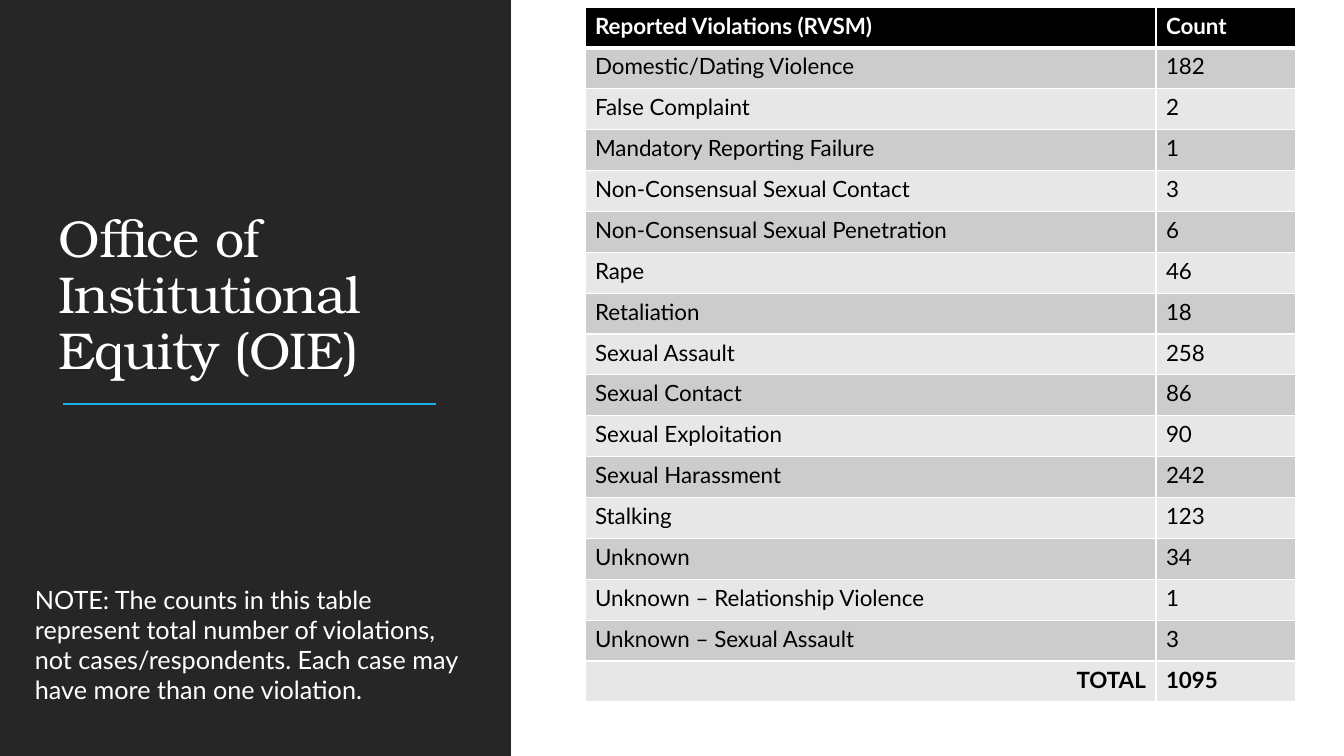
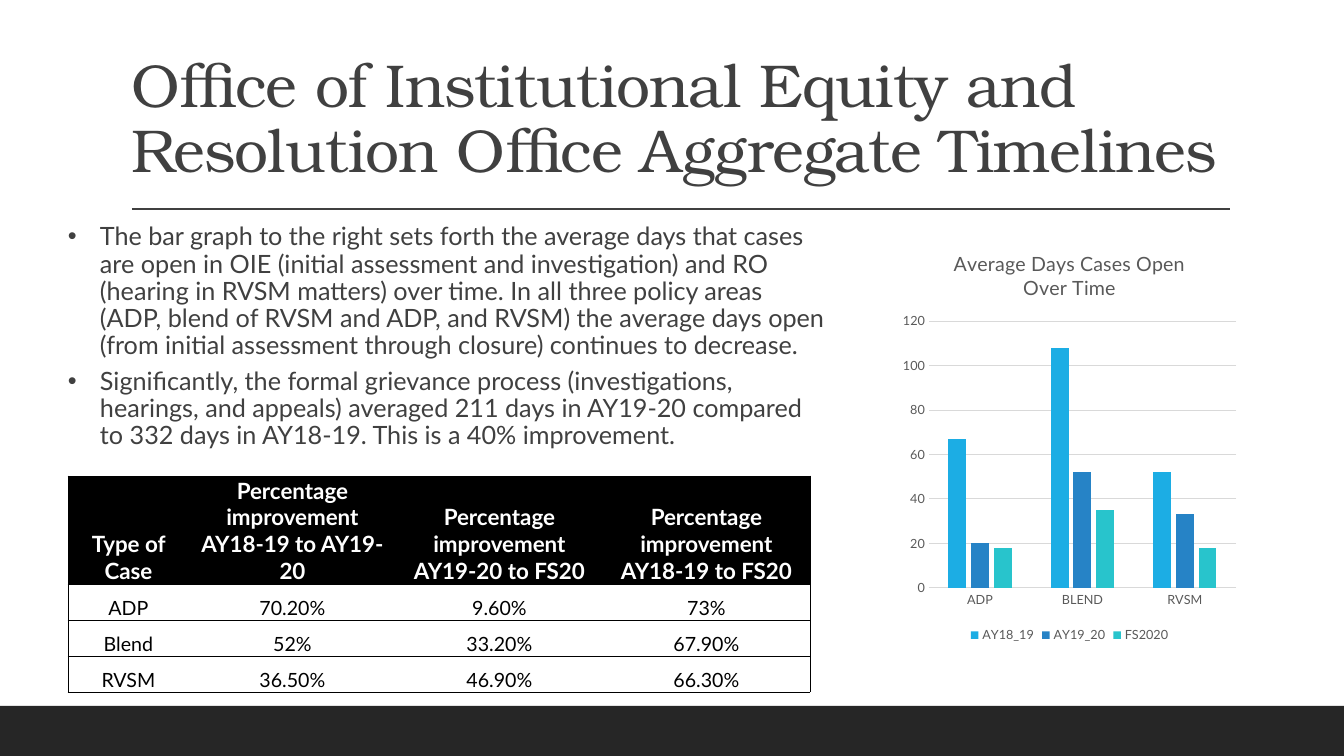
"""Build two slides on reported violations and case timelines of an equity office."""
from copy import deepcopy
from dataclasses import dataclass

from pptx import Presentation
from pptx.chart.data import CategoryChartData
from pptx.dml.color import RGBColor
from pptx.enum.chart import XL_CHART_TYPE, XL_LEGEND_POSITION, XL_TICK_MARK
from pptx.enum.shapes import MSO_CONNECTOR, MSO_SHAPE
from pptx.enum.text import MSO_ANCHOR, MSO_AUTO_SIZE, PP_ALIGN
from pptx.oxml import parse_xml
from pptx.oxml.ns import nsdecls, qn
from pptx.util import Emu, Pt


@dataclass(frozen=True)
class Theme:
    serif: str = "TeX Gyre Bonum"
    sans: str = "Lato"
    white: RGBColor = RGBColor.from_string("FFFFFF")
    black: RGBColor = RGBColor.from_string("000000")
    dark: RGBColor = RGBColor.from_string("262626")
    ink: RGBColor = RGBColor.from_string("404040")
    muted: RGBColor = RGBColor.from_string("595959")
    grid: RGBColor = RGBColor.from_string("D9D9D9")
    row_odd: RGBColor = RGBColor.from_string("CCCCCC")
    row_even: RGBColor = RGBColor.from_string("E7E7E7")
    blue: RGBColor = RGBColor.from_string("1CADE4")
    royal: RGBColor = RGBColor.from_string("2683C6")
    teal: RGBColor = RGBColor.from_string("28C4CC")
    side_title: float = 37
    title: float = 43.2
    body: float = 18
    table: float = 16
    table_small: float = 14
    chart_title: float = 14
    chart: float = 9


T = Theme()
PX = 914400 / 100.8
NO_STYLE = "{2D5ABB26-0587-4C30-8999-92F81FD0307C}"


def px(*lengths):
    return [Emu(round(n * PX)) for n in lengths]


def style(font, size, color, name=T.sans, bold=False):
    font.size, font.name, font.bold = Pt(size), name, bold
    font.color.rgb = color


prs = Presentation()
prs.slide_width, prs.slide_height = px(1344, 756)

FRAMES = [
    (5, "Office of Institutional Equity (OIE)", (48, 192, 403, 194), T.side_title, T.white,
     (0, 0, 511, 756), (63, 404, 436, 404), T.blue, 1.5),
    (1, "Office of Institutional Equity and Resolution Office Aggregate Timelines",
     (121, 31, 1109, 160), T.title, T.ink, (0, 706, 1344, 50), (132, 209, 1230, 209), T.ink, 1),
]
for layout, title, box, size, color, band_box, rule_ends, rule_color, rule_width in FRAMES:
    s = prs.slides.add_slide(prs.slide_layouts[layout])
    band = s.shapes.add_shape(MSO_SHAPE.RECTANGLE, *px(*band_box))
    band.shadow.inherit = False
    band.fill.solid()
    band.fill.fore_color.rgb = T.dark
    band.line.fill.background()
    s.shapes._spTree.insert(2, band._element)

    rule = s.shapes.add_connector(MSO_CONNECTOR.STRAIGHT, *px(*rule_ends))
    rule.line.color.rgb, rule.line.width = rule_color, Pt(rule_width)
    rule._element.spPr.append(parse_xml(f"<a:effectLst {nsdecls('a')}/>"))

    sp = s.shapes.title
    sp.left, sp.top, sp.width, sp.height = px(*box)
    tf = sp.text_frame
    tf.text = title
    tf.auto_size, tf.vertical_anchor = MSO_AUTO_SIZE.NONE, MSO_ANCHOR.BOTTOM
    p = tf.paragraphs[0]
    p.alignment, p.line_spacing = PP_ALIGN.LEFT, 0.9
    style(p.runs[0].font, size, color, T.serif)
    p.runs[0]._r.rPr.set("spc", "-50")

violations_slide, timelines_slide = prs.slides

VIOLATIONS = [
    ("Reported Violations (RVSM)", "Count"),
    ("Domestic/Dating Violence", "182"),
    ("False Complaint", "2"),
    ("Mandatory Reporting Failure", "1"),
    ("Non-Consensual Sexual Contact", "3"),
    ("Non-Consensual Sexual Penetration", "6"),
    ("Rape", "46"),
    ("Retaliation", "18"),
    ("Sexual Assault", "258"),
    ("Sexual Contact", "86"),
    ("Sexual Exploitation", "90"),
    ("Sexual Harassment", "242"),
    ("Stalking", "123"),
    ("Unknown", "34"),
    ("Unknown – Relationship Violence", "1"),
    ("Unknown – Sexual Assault", "3"),
    ("TOTAL", "1095"),
]
IMPROVEMENTS = [
    ("Type of Case", "Percentage improvement\nAY18-19 to AY19-20",
     "Percentage improvement\nAY19-20 to FS20", "Percentage improvement\nAY18-19 to FS20"),
    ("ADP", "70.20%", "9.60%", "73%"),
    ("Blend", "52%", "33.20%", "67.90%"),
    ("RVSM", "36.50%", "46.90%", "66.30%"),
]
TABLES = [
    (violations_slide, VIOLATIONS, (585, 7, 711, 695), (571, 140), None),
    (timelines_slide, IMPROVEMENTS, (68, 476, 742, 214), (121, 207, 207, 207), 106),
]
for s, rows, box, widths, header_height in TABLES:
    compact = s is timelines_slide
    tbl = s.shapes.add_table(len(rows), len(widths), *px(*box)).table
    tbl._tbl.tblPr.find(qn("a:tableStyleId")).text = NO_STYLE
    for col, width in zip(tbl.columns, px(*widths)):
        col.width = width
    if header_height:
        tbl.rows[0].height = px(header_height)[0]
        for row in list(tbl.rows)[1:]:
            row.height = px((box[3] - header_height) / (len(rows) - 1))[0]
    for i, row in enumerate(rows):
        header, total = i == 0, row[0] == "TOTAL"
        for j, text in enumerate(row):
            cell = tbl.cell(i, j)
            p = cell.text_frame.paragraphs[0]
            p.text = text
            size = T.table_small if compact and not header else T.table
            for r in p.runs:
                style(r.font, size, T.white if header else T.black, bold=header or total)
            for br in p._p.findall(qn("a:br")):
                br.append(deepcopy(p.runs[0]._r.rPr))
            if compact and not header:
                cell.fill.background()
            else:
                cell.fill.solid()
                cell.fill.fore_color.rgb = T.black if header else T.row_odd if i % 2 else T.row_even
            if compact:
                p.alignment = PP_ALIGN.CENTER
                cell.vertical_anchor = MSO_ANCHOR.BOTTOM
                cell.margin_left, cell.margin_top, cell.margin_right, cell.margin_bottom = px(1, 1, 1, 0)
                sides = "L" * (j == 0) + "R" * (j == len(row) - 1) + "TB"
                color, width = T.black, 0.5
            else:
                p.alignment = PP_ALIGN.RIGHT if total and j == 0 else PP_ALIGN.LEFT
                sides, color, width = "LRTB", T.white, 1
            for k, side in enumerate(sides):
                heavy = not compact and (header and side == "B" or i == 1 and side == "T")
                cell._tc.tcPr.insert(k, parse_xml(
                    f'<a:ln{side} {nsdecls("a")} w="{Pt(3 if heavy else width)}"><a:solidFill>'
                    f'<a:srgbClr val="{color}"/></a:solidFill></a:ln{side}>'))

tf = violations_slide.shapes.add_textbox(*px(25, 579, 460, 132)).text_frame
tf.word_wrap = True
tf.text = ("NOTE: The counts in this table represent total number of violations, "
           "not cases/respondents. Each case may have more than one violation.")
style(tf.paragraphs[0].runs[0].font, T.body, T.white)

FINDINGS = [
    "The bar graph to the right sets forth the average days that cases are open in OIE (initial "
    "assessment and investigation) and RO (hearing in RVSM matters) over time. In all three policy "
    "areas (ADP, blend of RVSM and ADP, and RVSM) the average days open (from initial assessment "
    "through closure) continues to decrease.",
    "Significantly, the formal grievance process (investigations, hearings, and appeals) averaged "
    "211 days in AY19-20 compared to 332 days in AY18-19. This is a 40% improvement.",
]
sp = timelines_slide.placeholders[1]
sp.left, sp.top, sp.width, sp.height = px(68, 219, 762, 406)
tf = sp.text_frame
tf.text = "\n".join(FINDINGS)
tf.auto_size = MSO_AUTO_SIZE.NONE
tf.margin_left = tf.margin_right = 0
indent = px(32)[0]
for p in tf.paragraphs:
    p.line_spacing, p.space_before, p.space_after = 0.9, Pt(0), Pt(6)
    pPr = p._p.get_or_add_pPr()
    pPr.set("marL", str(indent))
    pPr.set("indent", str(-indent))
    style(p.runs[0].font, T.body, T.ink)

SERIES = [
    ("AY18_19", (67, 108, 52), T.blue),
    ("AY19_20", (20, 52, 33), T.royal),
    ("FS2020", (18, 35, 18), T.teal),
]
data = CategoryChartData(number_format="0")
data.categories = ["ADP", "BLEND", "RVSM"]
for name, values, _ in SERIES:
    data.add_series(name, values)
chart = timelines_slide.shapes.add_chart(
    XL_CHART_TYPE.COLUMN_CLUSTERED, *px(896, 233, 347, 414), data).chart
style(chart.font, T.chart, T.muted)
chart.has_title = True
tf = chart.chart_title.text_frame
tf.text = "Average Days Cases Open\nOver Time"
for p in tf.paragraphs:
    style(p.runs[0].font, T.chart_title, T.muted)
chart.has_legend = True
chart.legend.position = XL_LEGEND_POSITION.BOTTOM
chart.legend.include_in_layout = False
plot = chart.plots[0]
plot.gap_width, plot.overlap, plot.vary_by_categories = 219, -27, False
for series, (_, _, color) in zip(plot.series, SERIES):
    series.format.fill.solid()
    series.format.fill.fore_color.rgb = color
for axis in (chart.category_axis, chart.value_axis):
    axis.major_tick_mark = axis.minor_tick_mark = XL_TICK_MARK.NONE
    style(axis.tick_labels.font, T.chart, T.muted)
axis.format.line.fill.background()
axis.minimum_scale, axis.maximum_scale, axis.major_unit = 0, 120, 20
for line in (chart.category_axis.format.line, axis.major_gridlines.format.line):
    line.color.rgb, line.width = T.grid, Pt(0.75)

prs.save("out.pptx")
